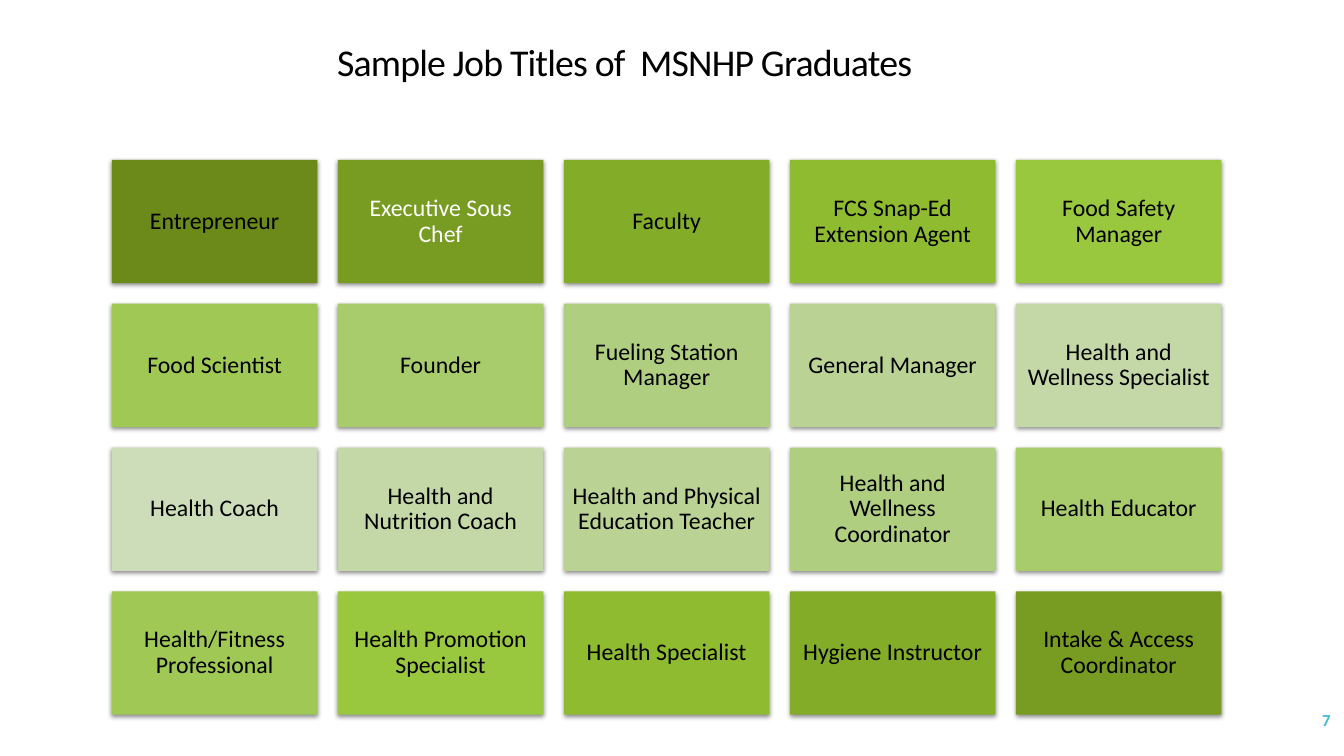
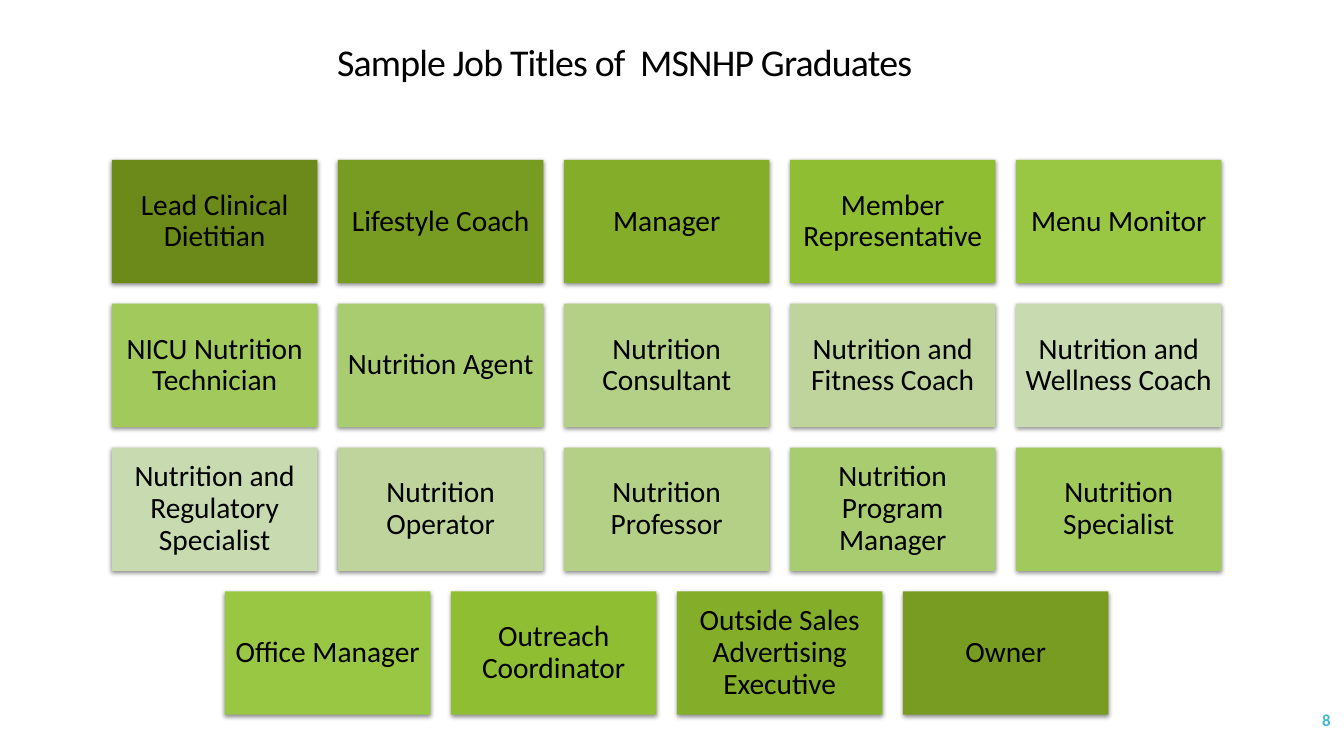
"""Two slides of graduate job titles, each a grid of shaded green tiles."""
import pptx
import pptx.dml.color
import pptx.enum.shapes
import pptx.enum.text
import pptx.oxml
import pptx.oxml.ns
import pptx.util

Pt = pptx.util.Pt
RGBColor = pptx.dml.color.RGBColor
ALIGN = pptx.enum.text.PP_ALIGN
RECT = pptx.enum.shapes.MSO_SHAPE.RECTANGLE

BLACK = RGBColor(0, 0, 0)
WHITE = RGBColor(255, 255, 255)
TEAL = RGBColor.from_string("40BAD2")
FONT = "Calibri"
TITLE = "Sample Job Titles of  MSNHP Graduates"

LEFT, TOP = 79.9, 114.2
WIDE, HIGH, GAP = 146.8, 88.1, 14.65
COLS = 5
SPAN = COLS * (WIDE + GAP) - GAP

SHADOW = (
    '<a:outerShdw %s blurRad="44450" dist="13970" dir="5400000" algn="ctr" rotWithShape="0">'
    '<a:srgbClr val="000000"><a:alpha val="45000"/></a:srgbClr></a:outerShdw>'
) % pptx.oxml.ns.nsdecls("a")

PAGES = [
    {
        "number": "7", "size": 17, "inset": 5, "light": ["Executive Sous Chef"],
        "shades": ["6B8A1A", "779C21", "83AC29", "8FBB31", "99C73E", "A0C855",
                   "A8CB6B", "B0CE80", "BAD294", "C4D7A7", "CEDDB9"],
        "jobs": [
            "Entrepreneur", "Executive Sous Chef", "Faculty",
            "FCS Snap-Ed Extension Agent", "Food Safety Manager",
            "Food Scientist", "Founder", "Fueling Station Manager",
            "General Manager", "Health and Wellness Specialist",
            "Health Coach", "Health and Nutrition Coach",
            "Health and Physical Education Teacher",
            "Health and Wellness Coordinator", "Health Educator",
            "Health/Fitness Professional", "Health Promotion Specialist",
            "Health Specialist", "Hygiene Instructor",
            "Intake & Access Coordinator",
        ],
    },
    {
        "number": "8", "size": 21, "inset": 6.5, "light": [],
        "shades": ["6B8A1A", "789C21", "84AE2A", "90BE33", "9AC743",
                   "A2C95B", "AACC71", "B4D087", "BED49C", "C8DAB0"],
        "jobs": [
            "Lead Clinical Dietitian", "Lifestyle Coach", "Manager",
            "Member Representative", "Menu Monitor",
            "NICU Nutrition Technician", "Nutrition Agent",
            "Nutrition Consultant", "Nutrition and Fitness Coach",
            "Nutrition and Wellness Coach",
            "Nutrition and Regulatory Specialist", "Nutrition Operator",
            "Nutrition Professor", "Nutrition Program Manager",
            "Nutrition Specialist",
            "Office Manager", "Outreach Coordinator",
            "Outside Sales Advertising Executive", "Owner",
        ],
    },
]


def write(shape, text, size, color, align=ALIGN.CENTER):
    frame = shape.text_frame
    frame.word_wrap = True
    frame.vertical_anchor = pptx.enum.text.MSO_ANCHOR.MIDDLE
    para = frame.paragraphs[0]
    para.alignment = align
    para.line_spacing = 0.9
    run = para.add_run()
    run.text = text
    run.font.name = FONT
    run.font.size = Pt(size)
    run.font.color.rgb = color
    return run


deck = pptx.Presentation()
deck.slide_width, deck.slide_height = Pt(960), Pt(540)

for page in PAGES:
    slide = deck.slides.add_slide(deck.slide_layouts[6])
    shapes = slide.shapes

    folio = shapes.add_textbox(Pt(837.4), Pt(500.4), Pt(120.2), Pt(28.8))
    write(folio, page["number"], 12, TEAL, ALIGN.RIGHT).font.bold = True

    title = shapes.add_textbox(Pt(0), Pt(28.8), Pt(892), Pt(33.8))
    run = write(title, TITLE, 27, BLACK)
    run.font._element.set("spc", "-60")

    jobs = page["jobs"]
    count = len(jobs)
    for i, job in enumerate(jobs):
        row, col = divmod(i, COLS)
        filled = min(COLS, count - row * COLS)
        start = LEFT + (SPAN - filled * (WIDE + GAP) + GAP) / 2
        tile = shapes.add_shape(
            RECT, Pt(start + col * (WIDE + GAP)), Pt(TOP + row * (HIGH + GAP)),
            Pt(WIDE), Pt(HIGH))
        tile.fill.solid()
        tile.fill.fore_color.rgb = RGBColor.from_string(page["shades"][min(i, count - i)])
        tile.line.fill.background()
        tile.shadow.inherit = False
        effects = tile._element.spPr.find(pptx.oxml.ns.qn("a:effectLst"))
        effects.append(pptx.oxml.parse_xml(SHADOW))
        frame = tile.text_frame
        frame.margin_left = frame.margin_right = Pt(page["inset"])
        frame.margin_top = frame.margin_bottom = Pt(page["inset"])
        write(tile, job, page["size"], WHITE if job in page["light"] else BLACK)

deck.save("out.pptx")
